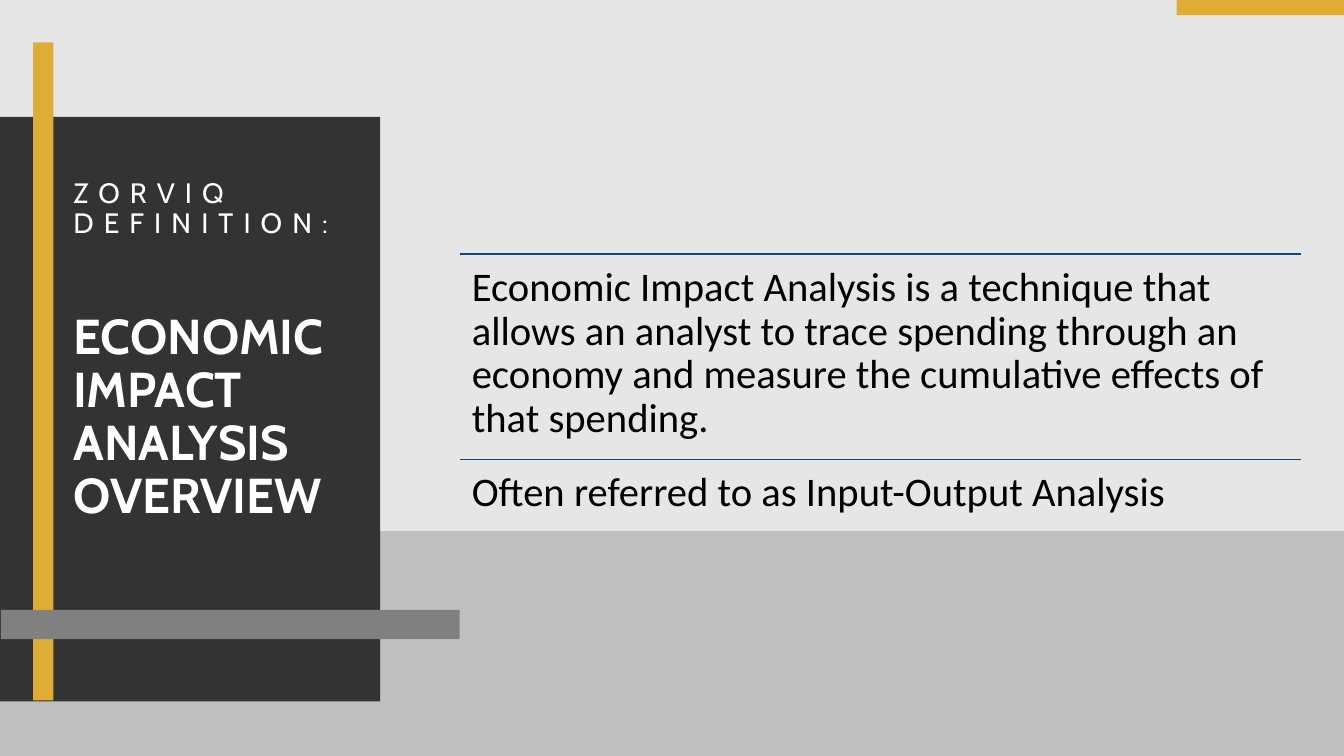
from dataclasses import dataclass

from lxml import etree
from pptx import Presentation
from pptx.dml.color import RGBColor
from pptx.enum.shapes import MSO_CONNECTOR, MSO_SHAPE
from pptx.enum.text import MSO_ANCHOR
from pptx.oxml.ns import qn
from pptx.slide import Slide
from pptx.util import Inches, Pt

RECT = MSO_SHAPE.RECTANGLE
STRAIGHT = MSO_CONNECTOR.STRAIGHT
TOP, MIDDLE = MSO_ANCHOR.TOP, MSO_ANCHOR.MIDDLE


@dataclass(frozen=True)
class Theme:
    background: str = "E7E6E6"
    floor: str = "BFBFBF"
    panel: str = "323332"
    accent: str = "DFAC36"
    bar: str = "808080"
    rule: str = "15457E"
    light: str = "FFFFFF"
    dark: str = "000000"
    heading_font: str = "Cabin"
    body_font: str = "Calibri"
    title_size: float = 35
    body_size: float = 29
    label_size: float = 20
    label_tracking: float = 7.2


THEME = Theme()


@dataclass(frozen=True)
class Block:
    left: float
    top: float
    width: float
    height: float
    color: str


@dataclass(frozen=True)
class Label:
    text: str
    left: float
    top: float
    width: float
    height: float
    font: str
    size: float
    color: str
    bold: bool = False
    tracking: float = 0
    anchor: MSO_ANCHOR = TOP
    inset_x: float = 0.1
    inset_y: float = 0.05


def add_block(s: Slide, block: Block) -> None:
    sp = s.shapes.add_shape(RECT, Inches(block.left), Inches(block.top),
                            Inches(block.width), Inches(block.height))
    sp.shadow.inherit = False
    sp.fill.solid()
    sp.fill.fore_color.rgb = RGBColor.from_string(block.color)
    sp.line.fill.background()


def add_label(s: Slide, label: Label) -> None:
    sp = s.shapes.add_textbox(Inches(label.left), Inches(label.top),
                              Inches(label.width), Inches(label.height))
    tf = sp.text_frame
    tf.word_wrap = True
    tf.vertical_anchor = label.anchor
    tf.margin_left = tf.margin_right = Inches(label.inset_x)
    tf.margin_top = tf.margin_bottom = Inches(label.inset_y)
    tf.text = label.text
    p = tf.paragraphs[0]
    p.line_spacing = 0.9
    font = p.runs[0].font
    font.name = label.font
    font.size = Pt(label.size)
    font.bold = label.bold
    font.color.rgb = RGBColor.from_string(label.color)
    if label.tracking:
        p.runs[0]._r.get_or_add_rPr().set("spc", str(round(label.tracking * 100)))


def add_rule(s: Slide, left: float, top: float, width: float) -> None:
    line = s.shapes.add_connector(STRAIGHT, Inches(left), Inches(top),
                                  Inches(left + width), Inches(top))
    line.line.color.rgb = RGBColor.from_string(THEME.rule)
    line.line.width = Pt(1)
    etree.SubElement(line._element.spPr, qn("a:effectLst"))


BLOCKS = [
    Block(0, 5.27, 13.33, 2.23, THEME.floor),
    Block(0, 1.16, 3.77, 5.8, THEME.panel),
    Block(0.33, 0.42, 0.2, 6.53, THEME.accent),
    Block(0.01, 6.05, 4.55, 0.29, THEME.bar),
    Block(11.67, 0, 1.67, 0.15, THEME.accent),
]

POINTS = [
    "Economic Impact Analysis is a technique that allows an analyst to trace "
    "spending through an economy and measure the cumulative effects of that spending.",
    "Often referred to as Input-Output Analysis",
]
POINT_LEFT, POINT_TOP, POINT_WIDTH, POINT_HEIGHT = 4.56, 2.52, 8.34, 2.04

HEADINGS = [
    Label("ECONOMIC IMPACT ANALYSIS OVERVIEW", 0.63, 3.02, 2.94, 2.25,
          THEME.heading_font, THEME.title_size, THEME.light, bold=True, anchor=MIDDLE),
    Label("ZORVIQ DEFINITION:", 0.63, 1.73, 2.94, 1.07, THEME.heading_font,
          THEME.label_size, THEME.light, tracking=THEME.label_tracking),
]


def main() -> None:
    prs = Presentation()
    prs.slide_width, prs.slide_height = Inches(13.33), Inches(7.5)
    s = prs.slides.add_slide(prs.slide_layouts[6])
    s.background.fill.solid()
    s.background.fill.fore_color.rgb = RGBColor.from_string(THEME.background)

    # Backdrop panels and bars
    for block in BLOCKS:
        add_block(s, block)

    # Ruled points on the right
    for i, text in enumerate(POINTS):
        top = POINT_TOP + i * POINT_HEIGHT
        add_rule(s, POINT_LEFT, top, POINT_WIDTH)
        add_label(s, Label(text, POINT_LEFT, top, POINT_WIDTH, POINT_HEIGHT,
                           THEME.body_font, THEME.body_size, THEME.dark,
                           inset_x=0.12, inset_y=0.12))

    # Title and label on the dark panel
    for heading in HEADINGS:
        add_label(s, heading)

    prs.save("out.pptx")


if __name__ == "__main__":
    main()
